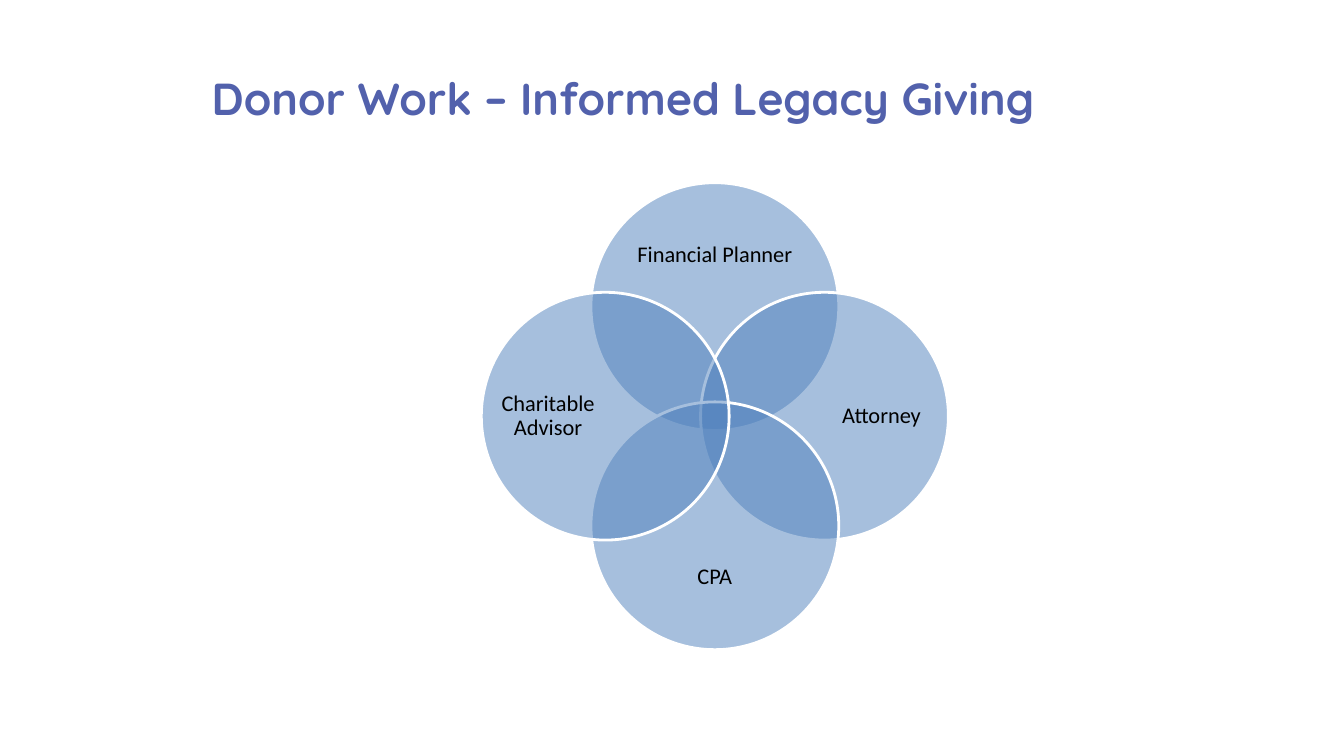
import pptx
import pptx.dml.color
import pptx.enum.shapes
import pptx.enum.text
import pptx.oxml
import pptx.oxml.ns
import pptx.util

COLORS = {"heading": "5261AC", "circle": "4F81BD", "outline": "FFFFFF", "label": "000000"}
COLUMNS, ROWS = 160, 90
ANCHOR = pptx.enum.text.MSO_ANCHOR
ALIGN = pptx.enum.text.PP_ALIGN


def rgb(name):
    return pptx.dml.color.RGBColor.from_string(COLORS[name])


def apply(target, formats):
    for attribute, value in formats.items():
        setattr(target, attribute, value)


class VennSlide:
    heading_font = {"name": "Quicksand", "size": pptx.util.Pt(32), "bold": True}
    label_font = {"name": "Calibri", "size": pptx.util.Pt(16)}
    label_frame = {
        "vertical_anchor": ANCHOR.MIDDLE,
        "margin_left": 0, "margin_right": 0, "margin_top": 0, "margin_bottom": 0,
    }
    label_paragraph = {"alignment": ALIGN.CENTER, "line_spacing": 0.9}

    def __init__(self, deck):
        self.column = deck.slide_width / COLUMNS
        self.row = deck.slide_height / ROWS
        self.slide = deck.slides.add_slide(deck.slide_layouts[6])

    def place(self, left, top, width, height):
        return (round(left * self.column), round(top * self.row),
                round(width * self.column), round(height * self.row))

    def text(self, wording, box, font, color, frame_format, paragraph_format):
        frame = self.slide.shapes.add_textbox(*self.place(*box)).text_frame
        apply(frame, {"word_wrap": True, **frame_format})
        paragraph = frame.paragraphs[0]
        apply(paragraph, paragraph_format)
        run = paragraph.add_run()
        run.text = wording
        apply(run.font, font)
        run.font.color.rgb = rgb(color)

    def heading(self, wording, box):
        self.text(wording, box, self.heading_font, "heading",
                  {"vertical_anchor": ANCHOR.TOP}, {"alignment": ALIGN.LEFT})

    def label(self, wording, x, y, width, height):
        box = (x - width / 2, y - height / 2, width, height)
        self.text(wording, box, self.label_font, "label",
                  self.label_frame, self.label_paragraph)

    def circle(self, x, y, diameter):
        box = (x - diameter / 2, y - diameter / 2, diameter, diameter)
        circle = self.slide.shapes.add_shape(
            pptx.enum.shapes.MSO_SHAPE.OVAL, *self.place(*box))
        circle.shadow.inherit = False
        circle.fill.solid()
        circle.fill.fore_color.rgb = rgb("circle")
        tint = circle.fill._xPr.find(".//" + pptx.oxml.ns.qn("a:srgbClr"))
        alpha = pptx.oxml.parse_xml(
            f'<a:alpha {pptx.oxml.ns.nsdecls("a")} val="50000"/>')
        tint.append(alpha)
        circle.line.color.rgb = rgb("outline")
        circle.line.width = pptx.util.Pt(2)


def main():
    deck = pptx.Presentation()
    apply(deck, {"slide_width": pptx.util.Inches(13.33),
                 "slide_height": pptx.util.Inches(7.5)})
    venn = VennSlide(deck)
    venn.heading("Donor Work – Informed Legacy Giving", (24, 7.8, 131, 10.2))

    center_x, center_y = 85.1, 49.55
    diameter, circle_reach = 29.5, 13.05
    wide = (19.15, 22.7, 9.35)
    tall = (19.85, 11.4, 22.7)
    advisors = [
        ("Financial Planner", 0, -1, wide),
        ("Attorney", 1, 0, tall),
        ("CPA", 0, 1, wide),
        ("Charitable Advisor", -1, 0, tall),
    ]
    for advisor, across, down, (label_reach, width, height) in advisors:
        venn.circle(center_x + across * circle_reach,
                    center_y + down * circle_reach, diameter)
        venn.label(advisor, center_x + across * label_reach,
                   center_y + down * label_reach, width, height)
    deck.save("out.pptx")


if __name__ == "__main__":
    main()
